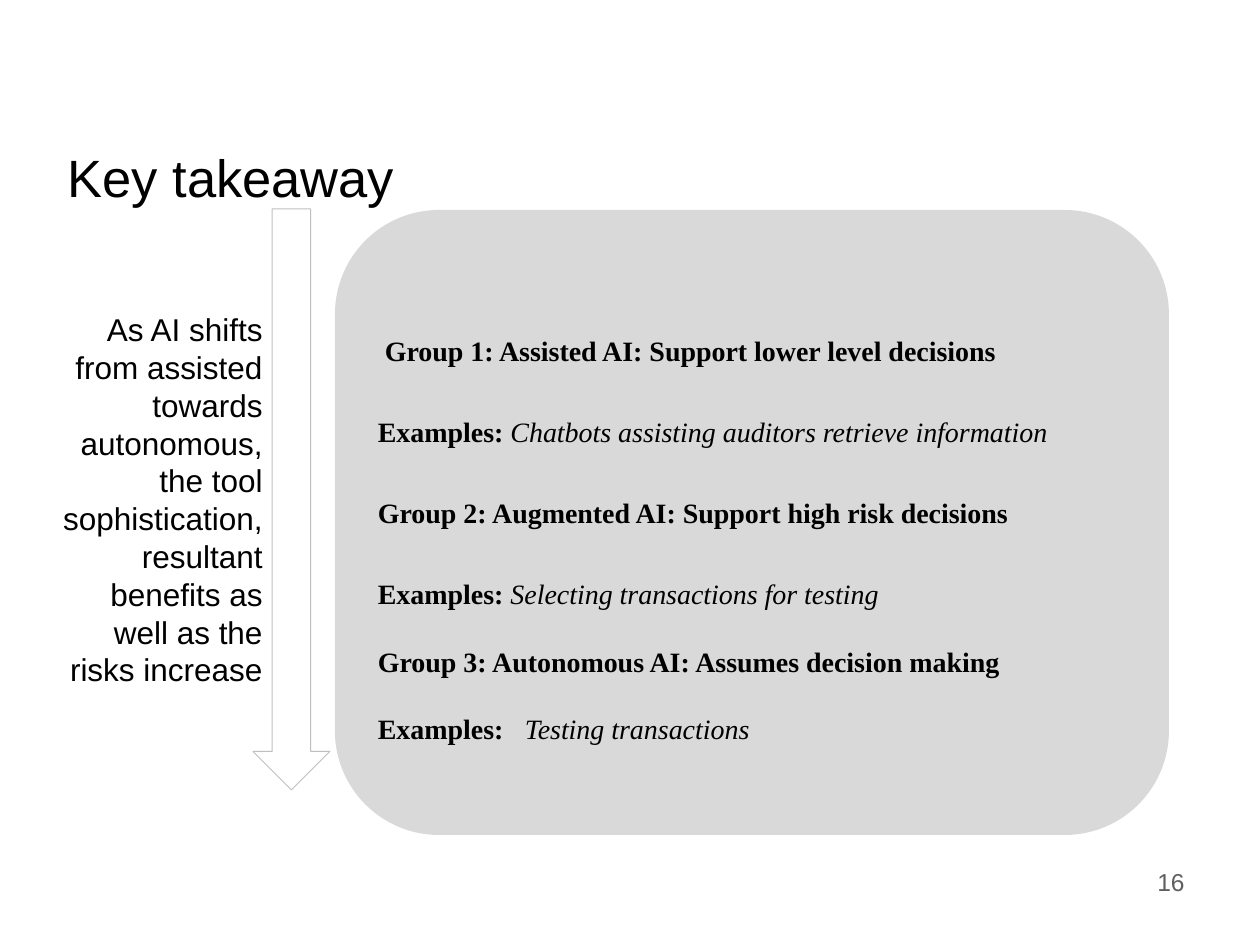
from lxml.etree import SubElement
from pptx import Presentation
from pptx.dml.color import RGBColor
from pptx.enum.shapes import MSO_SHAPE as Shape
from pptx.enum.text import MSO_ANCHOR as Anchor, MSO_AUTO_SIZE as AutoSize, PP_ALIGN as Align
from pptx.oxml.ns import qn
from pptx.util import Pt

SCALE = 914400 / 126
BODY = "Arial"
PANEL = "Times New Roman"

GROUPS = [
    ("Group 1: Assisted AI: Support lower level decisions",
     "Chatbots assisting auditors retrieve information"),
    ("Group 2: Augmented AI: Support high risk decisions",
     "Selecting transactions for testing"),
    ("Group 3: Autonomous AI: Assumes decision making",
     "Testing transactions"),
]
SHIFT = ("As AI shifts from assisted towards autonomous, the tool sophistication, "
         "resultant benefits as well as the risks increase")


def px(length):
    return round(length * SCALE)


def color(value):
    return RGBColor.from_string(value)


def apply(target, values):
    for key, value in values.items():
        setattr(target, key, value)


def add_run(paragraph, words, face, size, ink="000000", **style):
    run = paragraph.add_run()
    run.text = words
    apply(run.font, {"name": face, "size": Pt(size), **style})
    run.font.color.rgb = color(ink)


def add_title(slide, box, words):
    title = slide.shapes.title
    apply(title, dict(zip(("left", "top", "width", "height"), map(px, box))))
    apply(title.text_frame, {"vertical_anchor": Anchor.MIDDLE, "word_wrap": True,
                             "auto_size": AutoSize.NONE})
    heading = title.text_frame.paragraphs[0]
    heading.alignment = Align.LEFT
    add_run(heading, words, BODY, 30)


def add_right_text(slide, box, words, size, ink="000000"):
    frame = slide.shapes.add_textbox(*map(px, box)).text_frame
    frame.word_wrap = True
    paragraph = frame.paragraphs[0]
    paragraph.alignment = Align.RIGHT
    add_run(paragraph, words, BODY, size, ink)


def add_filled(slide, preset, box, fill):
    shape = slide.shapes.add_shape(preset, *map(px, box))
    shape.shadow.inherit = False
    shape.fill.solid()
    shape.fill.fore_color.rgb = color(fill)
    return shape


def add_arrow(slide, box):
    arrow = add_filled(slide, Shape.DOWN_ARROW, box, "FFFFFF")
    arrow.line.color.rgb = color("BFBFBF")
    arrow.line.width = Pt(0.5)


def add_groups(slide, box):
    panel = add_filled(slide, Shape.ROUNDED_RECTANGLE, box, "D9D9D9")
    panel.line.fill.background()
    frame = panel.text_frame
    apply(frame, {"word_wrap": True, "vertical_anchor": Anchor.MIDDLE})
    for _ in range(2 * len(GROUPS) - 1):
        frame.add_paragraph()
    lines = frame.paragraphs
    for index, line in enumerate(lines):
        apply(line, {"alignment": Align.LEFT, "line_spacing": 2.0,
                     "space_after": Pt(8 if index < 3 else 0)})
    lines[0]._p.get_or_add_pPr().set("indent", str(px(7)))
    tabs = SubElement(lines[-1]._p.get_or_add_pPr(), qn("a:tabLst"))
    SubElement(tabs, qn("a:tab"), pos=str(px(147)), algn="l")
    for index, (group, example) in enumerate(GROUPS):
        heading, detail = lines[2 * index:2 * index + 2]
        gap = "\t" if detail is lines[-1] else " "
        add_run(heading, group, PANEL, 16, bold=True)
        add_run(detail, "Examples:" + gap, PANEL, 16, bold=True)
        add_run(detail, example, PANEL, 16, italic=True)


def main():
    deck = Presentation()
    apply(deck, {"slide_width": px(1260), "slide_height": px(945)})
    slide = deck.slides.add_slide(deck.slide_layouts[5])
    add_right_text(slide, (903, 861, 294, 66), "16", 14, "5F5F5F")
    add_groups(slide, (335, 210, 834, 625))
    add_title(slide, (55, 171, 1182, 11), "Key takeaway")
    add_arrow(slide, (253, 209, 77, 581))
    add_right_text(slide, (39, 304, 236, 394), SHIFT, 18)
    deck.save("out.pptx")


if __name__ == "__main__":
    main()
